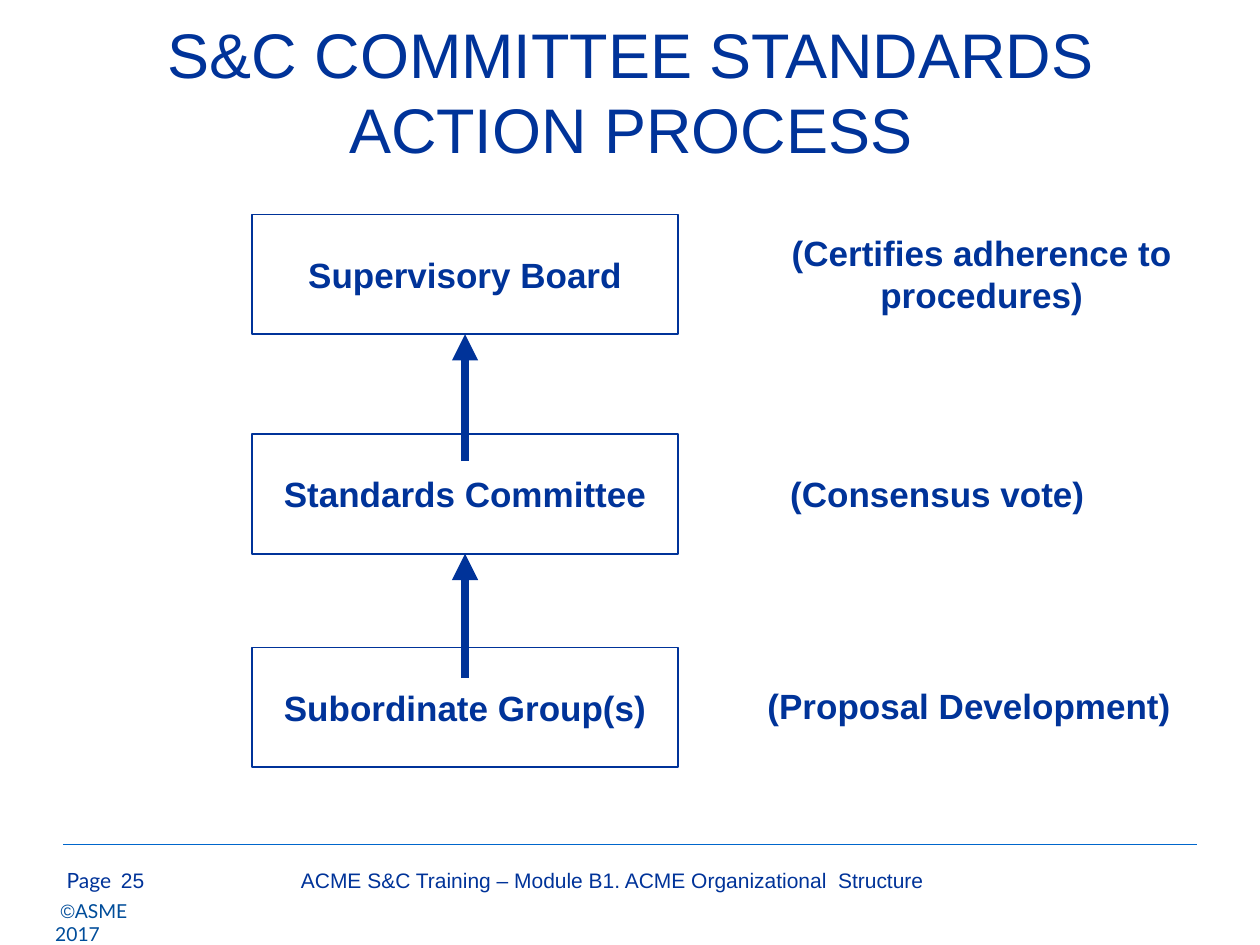
import pptx
import pptx.util
import pptx.dml.color
import pptx.enum.shapes
import pptx.enum.text
import pptx.oxml
import pptx.oxml.ns

Pt = pptx.util.Pt
ALIGN = pptx.enum.text.PP_ALIGN
MIDDLE = pptx.enum.text.MSO_ANCHOR.MIDDLE
FIT = pptx.enum.text.MSO_AUTO_SIZE
NAVY = pptx.dml.color.RGBColor(0x00, 0x33, 0x99)
BLUE = pptx.dml.color.RGBColor(0x00, 0x66, 0xCC)
STEEL = pptx.dml.color.RGBColor(0x00, 0x4D, 0x9A)

# Box column
LEFT, WIDE, HIGH = 144, 243.5, 68.5
MID = LEFT + WIDE / 2

# Each step: box top, box name, note, note place, note alignment
STEPS = [
    (122.5, "Supervisory Board", "(Certifies adherence to procedures)",
     (420, 129, 282, 55.5), ALIGN.CENTER),
    (248, "Standards Committee", "(Consensus vote)",
     (444.5, 266.5, 227.5, 31), ALIGN.LEFT),
    (370, "Subordinate Group(s)", "(Proposal Development)",
     (431.5, 387.5, 252.5, 31.5), ALIGN.LEFT),
]
# Height at which the arrow to each upper box starts
TAILS = [263.5, 387.5]


def style(para, size, color=NAVY, bold=False, face="Arial", align=ALIGN.LEFT):
    para.alignment = align
    font = para.font
    font.name, font.size, font.bold = face, Pt(size), bold
    font.color.rgb = color


def put_text(slide, place, text, size, **look):
    box = slide.shapes.add_textbox(*map(Pt, place))
    frame = box.text_frame
    frame.word_wrap = True
    para = frame.paragraphs[0]
    para.text = text
    style(para, size, **look)
    return para


def put_title(slide, text):
    title = slide.shapes.title
    title.left, title.top, title.width, title.height = map(
        Pt, (36.5, 7, 648, 90))
    frame = title.text_frame
    frame.text = text
    frame.auto_size = FIT.NONE
    frame.vertical_anchor = MIDDLE
    style(frame.paragraphs[0], 36, align=ALIGN.CENTER)


def put_box(slide, top, text):
    box = slide.shapes.add_shape(
        pptx.enum.shapes.MSO_SHAPE.RECTANGLE,
        Pt(LEFT), Pt(top), Pt(WIDE), Pt(HIGH))
    box.shadow.inherit = False
    box.fill.background()
    box.line.color.rgb = NAVY
    box.line.width = Pt(1)
    frame = box.text_frame
    frame.text = text
    frame.word_wrap = False
    frame.vertical_anchor = MIDDLE
    style(frame.paragraphs[0], 20, bold=True, align=ALIGN.CENTER)
    return box


def put_line(slide, start, end, color, width):
    line = slide.shapes.add_connector(
        pptx.enum.shapes.MSO_CONNECTOR.STRAIGHT, *map(Pt, start + end))
    line.line.color.rgb = color
    line.line.width = Pt(width)
    props = line._element.spPr
    props.append(pptx.oxml.parse_xml(
        "<a:effectLst %s/>" % pptx.oxml.ns.nsdecls("a")))
    return line


def put_arrow(slide, tail, box):
    end = (MID, (box.top + box.height) / Pt(1))
    line = put_line(slide, (MID, tail), end, NAVY, 5)
    line.end_connect(box, 2)
    line.line._get_or_add_ln().append(pptx.oxml.parse_xml(
        '<a:tailEnd %s type="triangle"/>' % pptx.oxml.ns.nsdecls("a")))


def put_foot(slide):
    put_line(slide, (36, 482.5), (684, 482.5), BLUE, 0.75)
    put_text(slide, (31, 492, 168, 37.5), "Page", 12, face="Lato")
    put_text(slide, (62, 492, 34, 37.5), "25", 12)
    put_text(slide, (110, 492, 480, 37.5),
             "ACME S&C Training – Module B1. ACME Organizational  Structure",
             12, align=ALIGN.CENTER)
    # Copyright line, with its sign in another face
    para = put_text(slide, (24.5, 510.5, 64, 21), " ©", 11,
                    color=STEEL, face="Lato")
    para.runs[0].font.name = "Arial"
    para.add_run().text = "ASME 2017"


def main():
    deck = pptx.Presentation()
    deck.slide_width, deck.slide_height = Pt(720), Pt(540)
    slide = deck.slides.add_slide(deck.slide_layouts[5])
    put_title(slide, "S&C COMMITTEE STANDARDS ACTION PROCESS")

    # Steps with their notes
    boxes = []
    for top, name, note, place, align in STEPS:
        boxes.append(put_box(slide, top, name))
        put_text(slide, place, note, 20, bold=True, align=align)

    # Arrows up the column
    for tail, box in zip(TAILS, boxes):
        put_arrow(slide, tail, box)

    put_foot(slide)
    deck.save("out.pptx")


if __name__ == "__main__":
    main()
